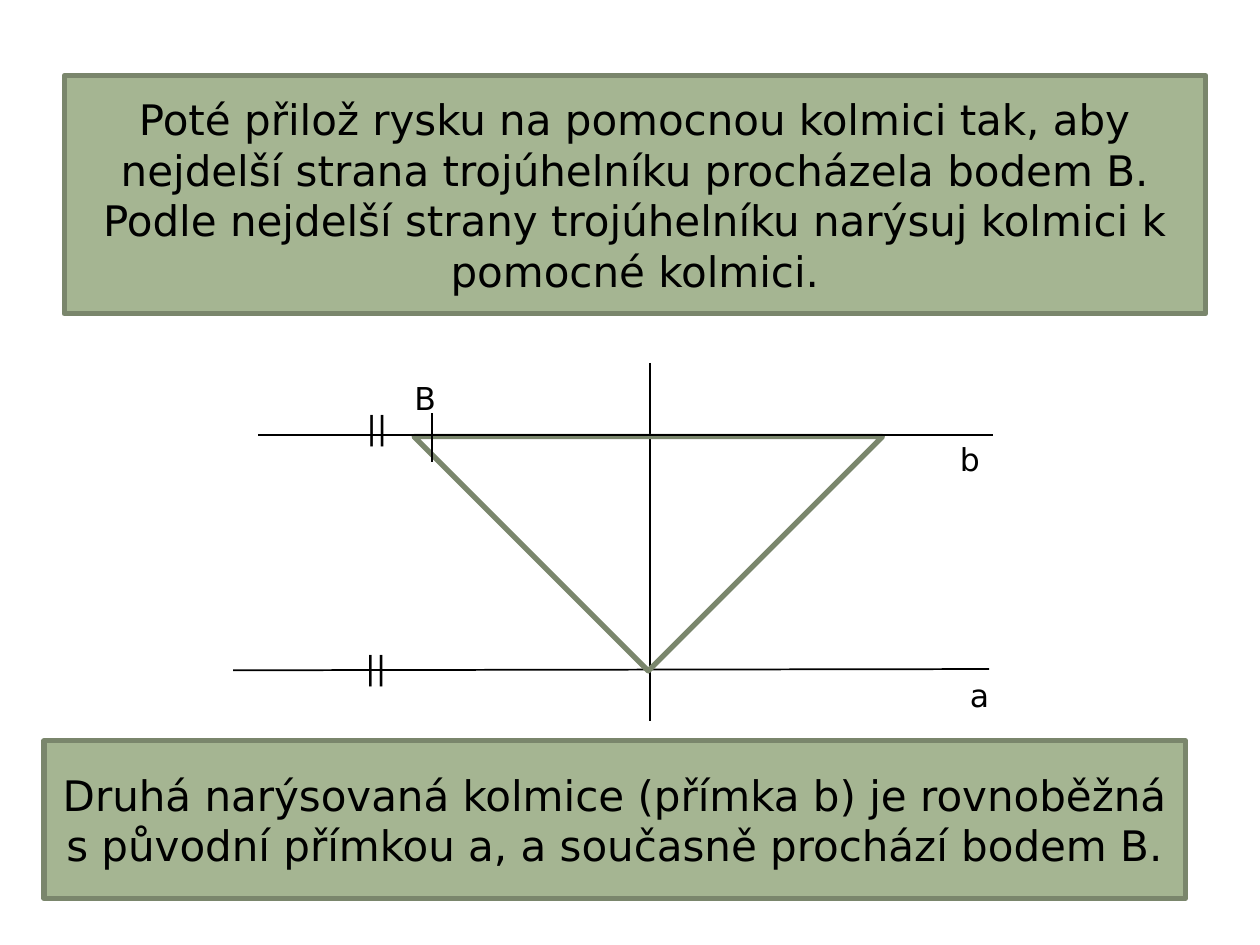
from pptx import Presentation
from pptx.dml.color import RGBColor
from pptx.enum.shapes import MSO_CONNECTOR, MSO_SHAPE
from pptx.enum.text import MSO_ANCHOR, MSO_AUTO_SIZE, PP_ALIGN
from pptx.oxml.ns import qn
from pptx.util import Inches, Pt
from lxml.etree import SubElement

FONT = "DejaVu Sans"
INK = "000000"
SAGE = "A5B592"
OLIVE = "7A866C"


def color(hex_value):
    return RGBColor.from_string(hex_value)


def format_text(frame, size):
    for paragraph in frame.paragraphs:
        for run in paragraph.runs:
            run.font.name = FONT
            run.font.size = Pt(size)
            run.font.color.rgb = color(INK)


def add_outlined(slide, preset, left, top, width, height):
    outlined = slide.shapes.add_shape(
        preset, Inches(left), Inches(top), Inches(width), Inches(height))
    outlined.shadow.inherit = False
    outlined.line.color.rgb = color(OLIVE)
    outlined.line.width = Pt(3)
    return outlined


def add_instruction(slide, text, left, top, height):
    box = add_outlined(slide, MSO_SHAPE.RECTANGLE, left, top, 9.06, height)
    box.fill.solid()
    box.fill.fore_color.rgb = color(SAGE)
    frame = box.text_frame
    frame.word_wrap = True
    frame.vertical_anchor = MSO_ANCHOR.MIDDLE
    frame.text = text
    frame.paragraphs[0].alignment = PP_ALIGN.CENTER
    format_text(frame, 24)


def add_set_square(slide, left, top, side):
    set_square = add_outlined(
        slide, MSO_SHAPE.RIGHT_TRIANGLE, left, top, side, side)
    set_square.fill.background()
    set_square.rotation = 315


def add_line(slide, x1, y1, x2, y2):
    line = slide.shapes.add_connector(
        MSO_CONNECTOR.STRAIGHT, Inches(x1), Inches(y1), Inches(x2), Inches(y2))
    line.line.color.rgb = color(INK)
    line.line.width = Pt(1)
    SubElement(line._element.spPr, qn("a:effectLst"))


def add_label(slide, text, left, top, width):
    label = slide.shapes.add_textbox(
        Inches(left), Inches(top), Inches(width), Inches(0.4))
    frame = label.text_frame
    frame.word_wrap = True
    frame.auto_size = MSO_AUTO_SIZE.SHAPE_TO_FIT_TEXT
    frame.text = text
    format_text(frame, 18)


def main():
    prs = Presentation()
    prs.slide_width, prs.slide_height = Inches(10), Inches(7.5)
    slide = prs.slides.add_slide(prs.slide_layouts[6])

    add_instruction(
        slide,
        "Poté přilož rysku na pomocnou kolmici tak, aby nejdelší strana "
        "trojúhelníku procházela bodem B. Podle nejdelší strany trojúhelníku "
        "narýsuj kolmici k pomocné kolmici.",
        0.51, 0.6, 1.89)

    # Auxiliary perpendicular, line a, set square, line b
    add_line(slide, 5.16, 2.88, 5.16, 5.72)
    add_line(slide, 1.85, 5.32, 7.85, 5.31)
    add_set_square(slide, 3.83, 2.15, 2.63)
    add_line(slide, 2.05, 3.45, 7.88, 3.45)

    # Parallel marks and line names
    for text, left, top, width in [
        ("||", 2.81, 3.19, 0.79),
        ("||", 2.8, 5.09, 0.79),
        ("b", 7.52, 3.44, 0.55),
        ("a", 7.6, 5.32, 0.47),
    ]:
        add_label(slide, text, left, top, width)

    # Point B: a small cross with its name
    add_line(slide, 3.43, 3.28, 3.43, 3.67)
    add_line(slide, 3.22, 3.45, 3.62, 3.45)
    add_label(slide, "B", 3.19, 2.96, 0.39)

    add_instruction(
        slide,
        "Druhá narýsovaná kolmice (přímka b) je rovnoběžná s původní "
        "přímkou a, a současně prochází bodem B.",
        0.35, 5.88, 1.25)

    prs.save("out.pptx")


if __name__ == "__main__":
    main()
